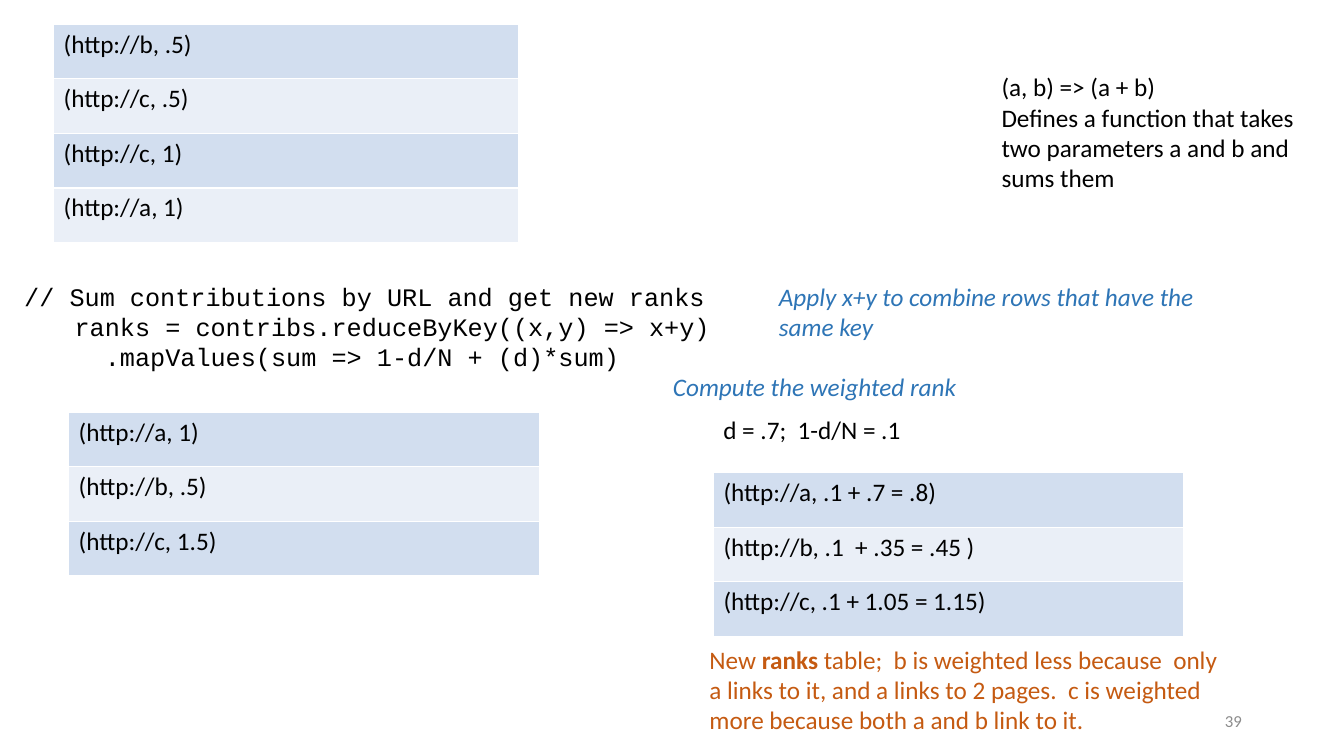
"""Build the slide on summing rank shares by key and weighting them."""
import dataclasses
import typing

import lxml.etree
import pptx
import pptx.dml.color
import pptx.enum.text
import pptx.oxml.ns
import pptx.slide
import pptx.table
import pptx.text.text
import pptx.util

Cm = pptx.util.Cm
Align = pptx.enum.text.PP_ALIGN
Anchor = pptx.enum.text.MSO_ANCHOR


@dataclasses.dataclass(frozen=True)
class Theme:
    sans: str = "Calibri"
    mono: str = "Courier New"
    body: int = 18
    small: int = 12
    black: str = "000000"
    grey: str = "8C8C8C"
    blue: str = "2E75B6"
    rust: str = "C55A11"
    white: str = "FFFFFF"
    bands: tuple[str, str] = ("D2DEEF", "EAEFF7")


THEME = Theme()
ROW = 1.375


class Style(typing.NamedTuple):
    color: str = THEME.black
    face: str = THEME.sans
    size: int = THEME.body
    slant: bool = False


PLAIN = Style()
CODE = Style(face=THEME.mono)
HINT = Style(color=THEME.blue, slant=True)
CLOSE = Style(color=THEME.rust)
FOOT = Style(color=THEME.grey, size=THEME.small)


class Note(typing.NamedTuple):
    left: float
    top: float
    width: float
    height: float
    lines: tuple[str, ...]
    style: Style = PLAIN
    align: Align = Align.LEFT
    anchor: Anchor = Anchor.TOP


class Pairs(typing.NamedTuple):
    left: float
    top: float
    width: float
    rows: tuple[str, ...]


NOTES = (
    Note(23.93, 17.65, 7.62, 1.02, ("39",), FOOT, Align.RIGHT, Anchor.MIDDLE),
    Note(24.99, 1.68, 8.2, 3.33, (
        "(a, b) => (a + b)",
        "Defines a function that takes two parameters a and b and sums them",
    )),
    Note(0.36, 6.96, 22.48, 2.57, (
        "// Sum contributions by URL and get new ranks",
        "\tranks = contribs.reduceByKey((x,y) => x+y)",
        "\t  .mapValues(sum => 1-d/N + (d)*sum)",
    ), CODE),
    Note(19.38, 6.96, 11.23, 1.8,
         ("Apply x+y to combine rows that have the same key",), HINT),
    Note(17.98, 10.31, 5.26, 1.02, ("d = .7;  1-d/N = .1",)),
    Note(16.71, 9.22, 11.23, 1.02, ("Compute the weighted rank",), HINT),
    Note(17.63, 16.1, 13.54, 2.57, (
        "New |ranks| table;  b is weighted less because  only a links to it, "
        "and a links to 2 pages.  c is weighted more because both a and b "
        "link to it.",
    ), CLOSE),
)

TABLES = (
    Pairs(1.35, 0.61, 11.73,
          ("(http://b, .5)", "(http://c, .5)", "(http://c, 1)", "(http://a, 1)")),
    Pairs(1.73, 10.39, 11.86,
          ("(http://a, 1)", "(http://b, .5)", "(http://c, 1.5)")),
    Pairs(17.98, 11.91, 11.86,
          ("(http://a, .1 + .7 = .8)", "(http://b, .1  + .35 = .45 )",
           "(http://c, .1 + 1.05 = 1.15)")),
)


def rgb(code: str) -> pptx.dml.color.RGBColor:
    """Turn a hex code into a colour."""
    return pptx.dml.color.RGBColor.from_string(code)


def write(para: pptx.text.text._Paragraph, text: str, style: Style) -> None:
    """Fill a paragraph, with the parts between bars in bold."""
    for index, part in enumerate(text.split("|")):
        run = para.add_run()
        run.text = part
        if index % 2:
            run.font.bold = True
    font = para.font
    font.name, font.size = style.face, pptx.util.Pt(style.size)
    font.italic = style.slant
    font.color.rgb = rgb(style.color)


def draw_note(slide: pptx.slide.Slide, note: Note) -> None:
    """Draw one text box."""
    box = slide.shapes.add_textbox(
        Cm(note.left), Cm(note.top), Cm(note.width), Cm(note.height))
    frame = box.text_frame
    frame.word_wrap = True
    frame.vertical_anchor = note.anchor
    for index, line in enumerate(note.lines):
        para = frame.add_paragraph() if index else frame.paragraphs[0]
        para.alignment = note.align
        write(para, line, note.style)


def edge(cell: pptx.table._Cell) -> None:
    """Give a cell thin white borders."""
    props = cell._tc.get_or_add_tcPr()
    name = pptx.oxml.ns.qn
    for side in ("a:lnL", "a:lnR", "a:lnT", "a:lnB"):
        line = lxml.etree.SubElement(props, name(side), w=str(pptx.util.Pt(1)))
        fill = lxml.etree.SubElement(line, name("a:solidFill"))
        lxml.etree.SubElement(fill, name("a:srgbClr"), val=THEME.white)


def draw_pairs(slide: pptx.slide.Slide, pairs: Pairs) -> None:
    """Draw one banded table of key and value pairs."""
    count = len(pairs.rows)
    table = slide.shapes.add_table(
        count, 1, Cm(pairs.left), Cm(pairs.top),
        Cm(pairs.width), Cm(ROW * count)).table
    table.first_row = False
    for index, text in enumerate(pairs.rows):
        cell = table.cell(index, 0)
        edge(cell)
        cell.fill.solid()
        cell.fill.fore_color.rgb = rgb(THEME.bands[index % 2])
        write(cell.text_frame.paragraphs[0], text, PLAIN)


def main() -> None:
    """Build and save the deck."""
    deck = pptx.Presentation()
    deck.slide_width, deck.slide_height = Cm(33.87), Cm(19.05)
    slide = deck.slides.add_slide(deck.slide_layouts[6])
    for pairs in TABLES:
        draw_pairs(slide, pairs)
    for note in NOTES:
        draw_note(slide, note)
    deck.save("out.pptx")


if __name__ == "__main__":
    main()
